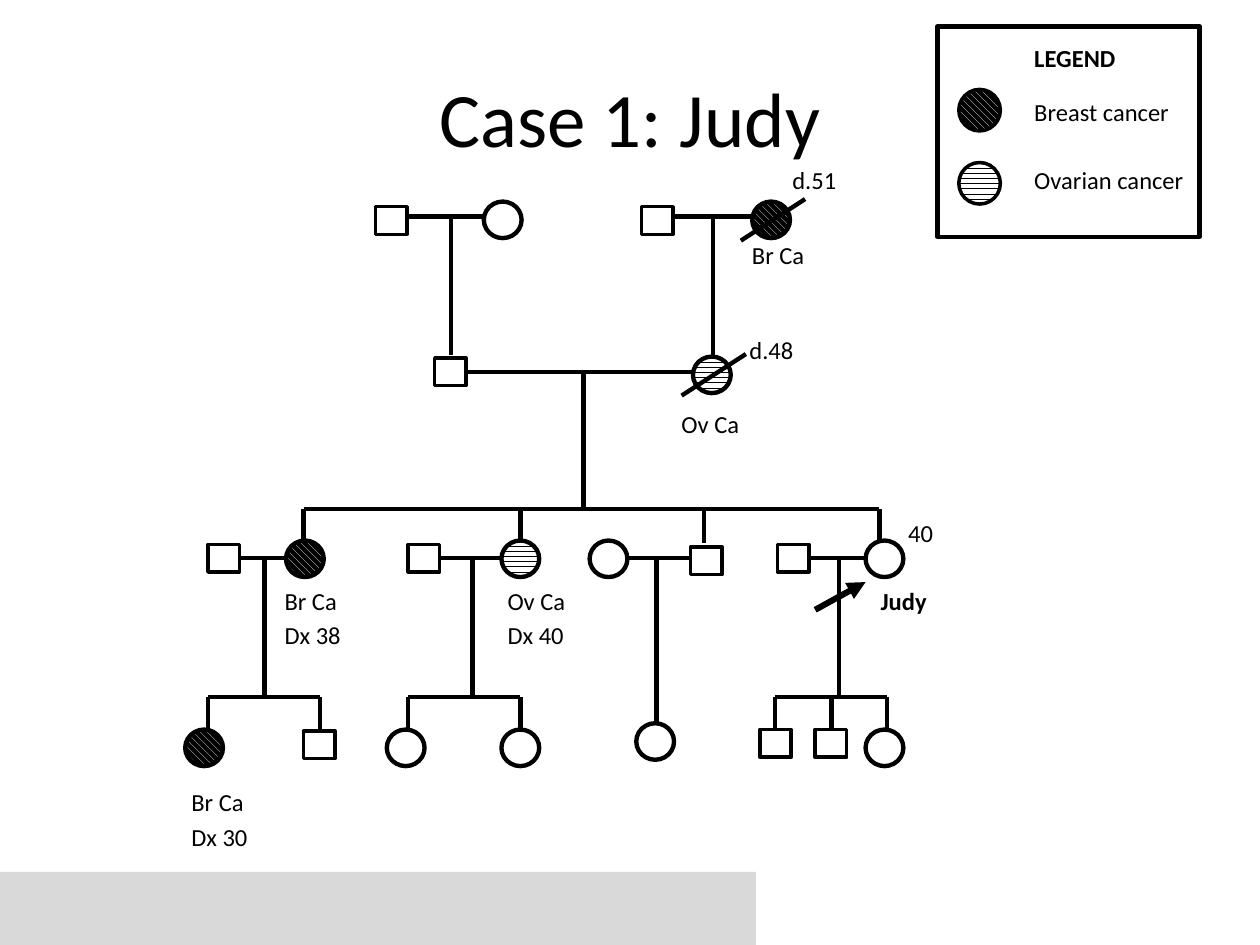
from dataclasses import dataclass

from lxml.etree import SubElement
from pptx import Presentation
from pptx.dml.color import RGBColor
from pptx.enum.dml import MSO_PATTERN
from pptx.enum.shapes import MSO_CONNECTOR, MSO_SHAPE
from pptx.enum.text import MSO_ANCHOR, PP_ALIGN
from pptx.oxml.ns import qn
from pptx.util import Inches, Pt


@dataclass(frozen=True)
class Theme:
    font: str = "Calibri"
    ink: RGBColor = RGBColor(0, 0, 0)
    paper: RGBColor = RGBColor(255, 255, 255)
    band: RGBColor = RGBColor(0xD9, 0xD9, 0xD9)
    title_size: float = 44
    label_size: float = 14
    label_gap: float = 2.8
    thin: float = 2
    line: float = 2.5
    arrow: float = 3.5


@dataclass(frozen=True)
class Box:
    left: float
    top: float
    width: float
    height: float


THEME = Theme()
BREAST = MSO_PATTERN.WIDE_DOWNWARD_DIAGONAL
OVARIAN = MSO_PATTERN.DARK_HORIZONTAL
MALE_WIDTH, MALE_HEIGHT, FEMALE_SIZE = 0.25, 0.22, 0.3


def style_runs(paragraph, size, bold=False):
    for run in paragraph.runs:
        run.font.name = THEME.font
        run.font.size = Pt(size)
        run.font.bold = bold
        run.font.color.rgb = THEME.ink


class Region:
    def __init__(self, slide, box):
        self.shapes = slide.shapes
        self.box = box

    def point(self, x, y):
        return Inches(self.box.left + x), Inches(self.box.top + y)

    def outline(self, kind, x, y, width, height, weight, pattern=None):
        symbol = self.shapes.add_shape(kind, *self.point(x, y), Inches(width), Inches(height))
        symbol.shadow.inherit = False
        symbol.line.color.rgb = THEME.ink
        symbol.line.width = Pt(weight)
        if pattern is None:
            symbol.fill.background()
        else:
            symbol.fill.patterned()
            symbol.fill.pattern = pattern
            symbol.fill.fore_color.rgb = THEME.paper
            symbol.fill.back_color.rgb = THEME.ink

    def line(self, x1, y1, x2, y2, weight=THEME.line):
        link = self.shapes.add_connector(
            MSO_CONNECTOR.STRAIGHT, *self.point(x1, y1), *self.point(x2, y2))
        link.line.color.rgb = THEME.ink
        link.line.width = Pt(weight)
        SubElement(link._element.spPr, qn("a:effectLst"))
        return link

    def arrow(self, x1, y1, x2, y2):
        pointer = self.line(x1, y1, x2, y2, THEME.arrow)
        SubElement(pointer.line._get_or_add_ln(), qn("a:tailEnd"), type="triangle")

    def label(self, x, y, width, height, *texts, gaps=None, bold_first=False):
        frame = self.shapes.add_textbox(
            *self.point(x, y), Inches(width), Inches(height)).text_frame
        frame.word_wrap = False
        frame.text = "\n".join(texts)
        gaps = gaps or [THEME.label_gap] * (len(texts) - 1)
        for index, paragraph in enumerate(frame.paragraphs):
            paragraph.alignment = PP_ALIGN.LEFT
            if index:
                paragraph.space_before = Pt(gaps[index - 1])
            style_runs(paragraph, THEME.label_size, bold_first and index == 0)

    def male(self, x, y):
        self.outline(MSO_SHAPE.RECTANGLE, x, y, MALE_WIDTH, MALE_HEIGHT, THEME.thin)

    def female(self, x, y, cancer=None, deceased=False):
        self.outline(MSO_SHAPE.OVAL, x, y, FEMALE_SIZE, FEMALE_SIZE - 0.01, THEME.line, cancer)
        if deceased:
            self.line(x + 0.42, y - 0.02, x - 0.09, y + 0.31)

    def couple(self, left, right, y, descent, bottom):
        self.line(left, y, right, y)
        self.line(descent, y, descent, bottom)

    def sibship(self, y, bottom, *children):
        self.line(children[0], y, children[-1], y)
        for child in children:
            self.line(child, y, child, bottom)


def add_title(slide, box):
    title = slide.shapes.title
    title.left, title.top = Inches(box.left), Inches(box.top)
    title.width, title.height = Inches(box.width), Inches(box.height)
    title.text_frame.text = "Case 1: Judy"
    title.text_frame.vertical_anchor = MSO_ANCHOR.MIDDLE
    heading = title.text_frame.paragraphs[0]
    heading.alignment = PP_ALIGN.CENTER
    style_runs(heading, THEME.title_size)


def add_footer_band(slide, box):
    band = slide.shapes.add_shape(
        MSO_SHAPE.RECTANGLE, Inches(box.left), Inches(box.top),
        Inches(box.width), Inches(box.height))
    band.shadow.inherit = False
    band.fill.solid()
    band.fill.fore_color.rgb = THEME.band
    band.line.fill.background()


def add_legend(slide, box):
    legend = Region(slide, box)
    legend.outline(MSO_SHAPE.RECTANGLE, 0, 0, box.width, box.height, THEME.line)
    for y, cancer in ((0.5, BREAST), (1.08, OVARIAN)):
        legend.outline(MSO_SHAPE.OVAL, 0.17, y, 0.33, 0.33, THEME.thin, cancer)
    legend.label(0.67, 0.08, 1.39, 1.35, "LEGEND", "Breast cancer", "Ovarian cancer",
                 gaps=(14, 22), bold_first=True)


def add_grandparents(slide, box):
    row = Region(slide, box)
    for male, female, descent in ((1.58, 2.44, 2.18), (3.69, 4.57, 4.26)):
        row.male(male, 0.44)
        row.couple(male + MALE_WIDTH, female, 0.52, descent, 1.62)
    row.female(2.44, 0.4)
    row.female(4.57, 0.4, BREAST, deceased=True)
    row.label(4.47, 0.66, 1, 0.34, "Br Ca")
    row.label(4.79, 0.06, 0.56, 0.34, "d.51")


def add_parents(slide, box):
    row = Region(slide, box)
    row.male(2.05, 0.24)
    row.couple(2.31, 4.13, 0.35, 3.23, 1.44)
    row.female(4.1, 0.23, OVARIAN, deceased=True)
    row.label(3.91, 0.6, 0.66, 0.34, "Ov Ca")
    row.label(4.45, 0.01, 0.56, 0.34, "d.48")


def add_siblings(slide, box):
    row = Region(slide, box)
    row.sibship(0.04, 0.31, 1.01, 2.73, 4.19, 5.58)
    for male, female, descent, cancer in (
            (0.25, 0.87, 0.7, BREAST), (1.84, 2.58, 2.35, OVARIAN), (4.77, 5.47, 5.26, None)):
        row.male(male, 0.32)
        row.couple(male + MALE_WIDTH, female, 0.43, descent, 1.53)
        row.female(female, 0.29, cancer)
    row.female(3.28, 0.29)
    row.couple(3.56, 4.07, 0.43, 3.81, 1.74)
    row.male(4.08, 0.34)
    row.label(0.76, 0.6, 0.65, 0.62, "Br Ca", "Dx 38")
    row.label(2.53, 0.6, 0.66, 0.62, "Ov Ca", "Dx 40")
    row.label(5.49, 0.6, 0.58, 0.34, "Judy", bold_first=True)
    row.label(5.71, 0.06, 0.56, 0.34, "40")
    row.arrow(5.07, 0.84, 5.47, 0.62)


def add_children(slide, box):
    row = Region(slide, box)
    for children in ((0.25, 1.14), (1.84, 2.73), (4.75, 5.2, 5.64)):
        row.sibship(0.03, 0.3, *children)
    for x, y in ((1.01, 0.3), (4.63, 0.29), (5.07, 0.29)):
        row.male(x, y)
    row.female(0.07, 0.29, BREAST)
    for x, y in ((1.67, 0.29), (2.58, 0.29), (3.65, 0.24), (5.47, 0.29)):
        row.female(x, y)
    row.label(0.02, 0.7, 0.65, 0.62, "Br Ca", "Dx 30")


def main():
    deck = Presentation()
    deck.slide_width, deck.slide_height = Inches(10), Inches(7.5)
    slide = deck.slides.add_slide(deck.slide_layouts[5])
    add_footer_band(slide, Box(0, 6.92, 6, 0.58))
    add_title(slide, Box(0.5, 0.3, 9, 1.25))
    add_legend(slide, Box(7.44, 0.21, 2.08, 1.67))
    generations = (add_grandparents, add_parents, add_siblings, add_children)
    for add_generation, top in zip(generations, (1.2, 2.6, 4, 5.5)):
        add_generation(slide, Box(1.4, top, 6.3, 1.4))
    deck.save("out.pptx")


if __name__ == "__main__":
    main()
